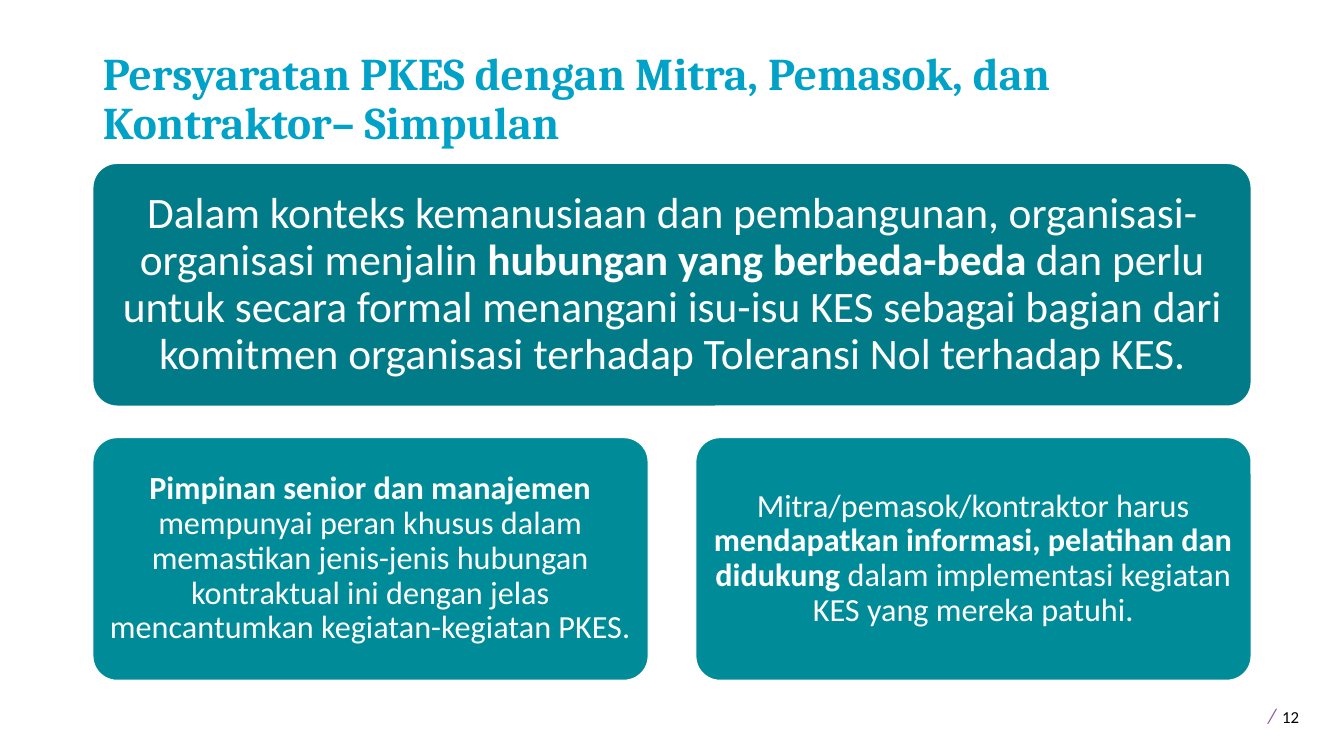
from dataclasses import dataclass

import pptx
import pptx.dml.color
import pptx.enum.shapes
import pptx.enum.text
import pptx.util

Inches = pptx.util.Inches
Pt = pptx.util.Pt
ALIGN = pptx.enum.text.PP_ALIGN
ANCHOR = pptx.enum.text.MSO_ANCHOR

LEFT = 0.92
CARD_HEIGHT = 2.41
HALF_WIDTH = 5.51
COLUMN_STEP = 5.98
TOP_ROW, BOTTOM_ROW = 1.62, 4.34


@dataclass
class Run:
    text: str
    bold: bool = False


@dataclass
class Card:
    left: float
    top: float
    width: float
    fill: str
    size: float
    inset: float
    runs: list[Run]


CARDS = [
    Card(LEFT, TOP_ROW, COLUMN_STEP + HALF_WIDTH, "007B87", 31, 0.13, [
        Run("Dalam konteks kemanusiaan dan pembangunan, organisasi-organisasi menjalin "),
        Run("hubungan yang berbeda-beda ", True),
        Run("dan perlu untuk secara formal menangani isu-isu KES sebagai bagian dari "
            "komitmen organisasi terhadap Toleransi Nol terhadap KES."),
    ]),
    Card(LEFT, BOTTOM_ROW, HALF_WIDTH, "008B99", 23, 0.1, [
        Run("Pimpinan senior dan manajemen ", True),
        Run("mempunyai peran khusus dalam memastikan jenis-jenis hubungan kontraktual ini "
            "dengan jelas mencantumkan kegiatan-kegiatan PKES."),
    ]),
    Card(LEFT + COLUMN_STEP, BOTTOM_ROW, HALF_WIDTH, "008B99", 23, 0.1, [
        Run("Mitra/pemasok/kontraktor harus "),
        Run("mendapatkan informasi, pelatihan dan didukung ", True),
        Run("dalam implementasi kegiatan KES yang mereka patuhi."),
    ]),
]


def rgb(value: str) -> pptx.dml.color.RGBColor:
    return pptx.dml.color.RGBColor.from_string(value)


def add_text(p, text: str, *, size: float, color: str, font: str = "Calibri",
             bold: bool = False, italic: bool = False) -> None:
    r = p.add_run()
    r.text = text
    r.font.name = font
    r.font.size = Pt(size)
    r.font.bold = bold
    r.font.italic = italic
    r.font.color.rgb = rgb(color)


def add_title(s) -> None:
    sp = s.shapes.title
    sp.left, sp.top = Inches(LEFT), Inches(0.4)
    sp.width, sp.height = Inches(11.5), Inches(1.13)
    tf = sp.text_frame
    tf.word_wrap = True
    tf.auto_size = pptx.enum.text.MSO_AUTO_SIZE.NONE
    tf.vertical_anchor = ANCHOR.BOTTOM
    p = tf.paragraphs[0]
    p.alignment = ALIGN.LEFT
    p.line_spacing = 0.9
    p.space_before = Pt(0)
    add_text(p, "Persyaratan PKES dengan Mitra, Pemasok, dan Kontraktor– Simpulan",
             size=32.4, color="00A2C7", font="Cambria", bold=True)


def add_card(s, card: Card) -> None:
    sp = s.shapes.add_shape(
        pptx.enum.shapes.MSO_SHAPE.ROUNDED_RECTANGLE,
        Inches(card.left), Inches(card.top), Inches(card.width), Inches(CARD_HEIGHT))
    sp.adjustments[0] = 0.1
    sp.shadow.inherit = False
    sp.fill.solid()
    sp.fill.fore_color.rgb = rgb(card.fill)
    sp.line.color.rgb = rgb("FFFFFF")
    sp.line.width = Pt(1)
    tf = sp.text_frame
    tf.word_wrap = True
    tf.vertical_anchor = ANCHOR.MIDDLE
    tf.margin_left = tf.margin_right = Inches(card.inset)
    tf.margin_top = tf.margin_bottom = Inches(card.inset)
    p = tf.paragraphs[0]
    p.alignment = ALIGN.CENTER
    p.line_spacing = 0.9
    for run in card.runs:
        add_text(p, run.text, size=card.size, color="FFFFFF", bold=run.bold)


def add_page_number(s) -> None:
    sp = s.shapes.add_textbox(Inches(12.48), Inches(6.88), Inches(0.82), Inches(0.4))
    tf = sp.text_frame
    tf.word_wrap = True
    p = tf.paragraphs[0]
    add_text(p, "/", size=15, color="9053A1", italic=True)
    add_text(p, " ", size=18, color="000000")
    add_text(p, "12", size=12, color="000000")


def main() -> None:
    prs = pptx.Presentation()
    prs.slide_width, prs.slide_height = Inches(13.33), Inches(7.5)
    s = prs.slides.add_slide(prs.slide_layouts[5])
    add_title(s)
    for card in CARDS:
        add_card(s, card)
    add_page_number(s)
    prs.save("out.pptx")


if __name__ == "__main__":
    main()
